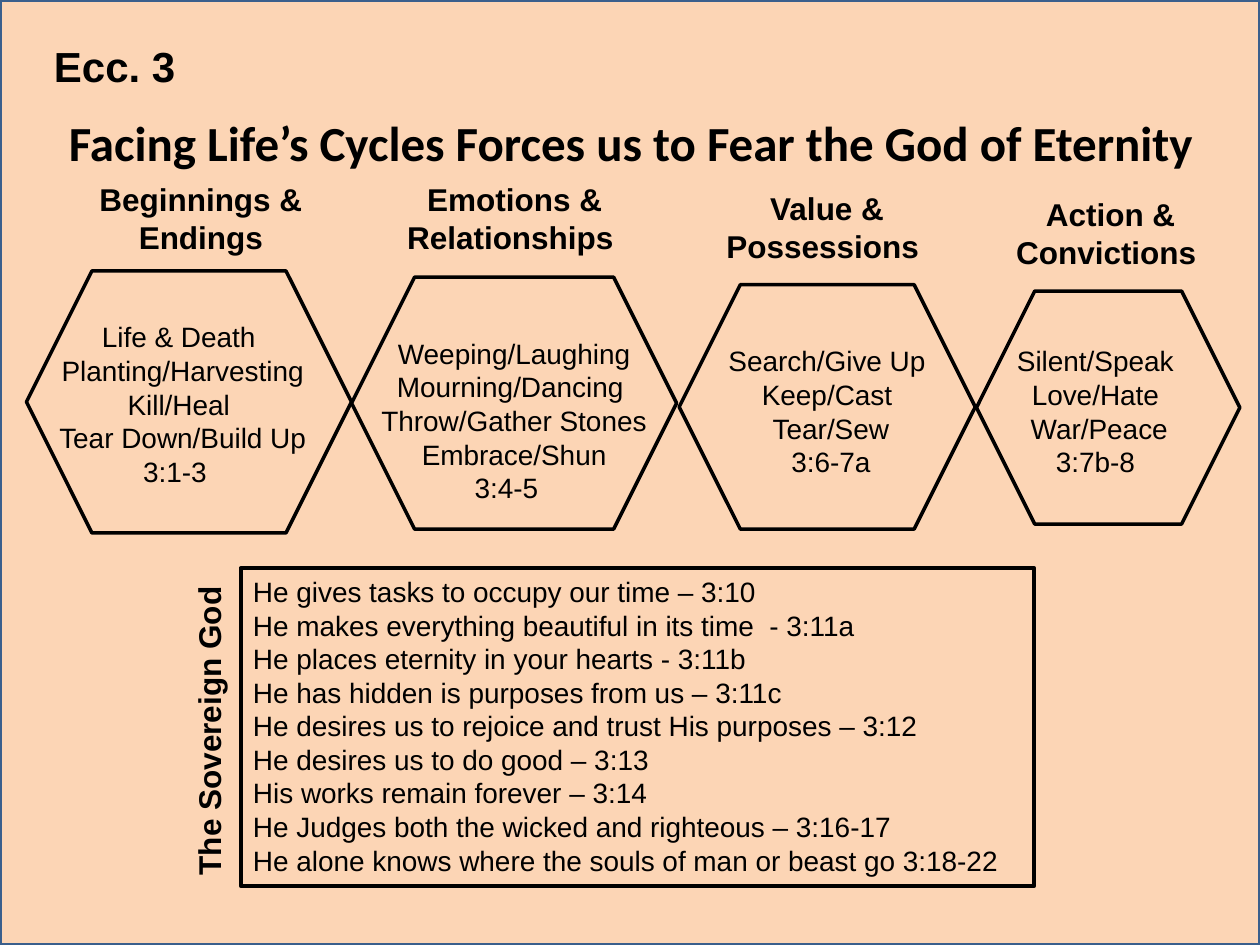
from pptx import Presentation
from pptx import util as u
from pptx.dml.color import RGBColor
from pptx.enum import shapes, text

COLORS = {"ink": "000000", "paper": "FCD5B5", "frame": "3A5F8C"}
LEFT, CENTER = text.PP_ALIGN.LEFT, text.PP_ALIGN.CENTER
BODY = {"name": "Arial", "size": u.Pt(16), "bold": False}
LABEL = {"name": "Arial", "size": u.Pt(18), "bold": True}
CORNER = {"name": "Arial", "size": u.Pt(24), "bold": True}
TITLE = {"name": "Calibri", "size": u.Pt(28), "bold": True}

CYCLES = [
    ("Beginnings & Endings", (0.68, 1.38, 1.83, 0.71), (0.21, 2.15, 2.58, 2.08),
     (0.16, 2.49, 2.58, 1.45),
     ["Life & Death ", "Planting/Harvesting", "Kill/Heal ", "Tear Down/Build Up", "3:1-3  "]),
    ("Emotions & Relationships ", (3.11, 1.38, 1.95, 0.71), (2.79, 2.2, 2.58, 2),
     (2.79, 2.62, 2.58, 1.45),
     ["Weeping/Laughing", "Mourning/Dancing ", "Throw/Gather Stones", "Embrace/Shun", "3:4-5  "]),
    ("Value & Possessions ", (5.65, 1.45, 1.83, 0.71), (5.39, 2.26, 2.35, 1.94),
     (5.68, 2.68, 1.83, 1.18),
     ["Search/Give Up ", "Keep/Cast ", "Tear/Sew", "3:6-7a"]),
    ("Action & Convictions ", (7.9, 1.5, 1.83, 0.71), (7.75, 2.31, 2.09, 1.85),
     (7.81, 2.68, 1.83, 1.18),
     ["Silent/Speak ", "Love/Hate ", "War/Peace", "3:7b-8 "]),
]
SOVEREIGN = [
    "He gives tasks to occupy our time – 3:10",
    "He makes everything beautiful in its time  - 3:11a",
    "He places eternity in your hearts - 3:11b",
    "He has hidden is purposes from us – 3:11c",
    "He desires us to rejoice and trust His purposes – 3:12",
    "He desires us to do good – 3:13",
    "His works remain forever – 3:14",
    "He Judges both the wicked and righteous – 3:16-17",
    "He alone knows where the souls of man or beast go 3:18-22",
]


def rgb(name):
    return RGBColor.from_string(COLORS[name])


class Deck:
    def __init__(self, width, height):
        self.prs = Presentation()
        self.prs.slide_width, self.prs.slide_height = u.Inches(width), u.Inches(height)
        self.s = self.prs.slides.add_slide(self.prs.slide_layouts[5])

    def add_lines(self, sp, lines, style, align, anchor=text.MSO_ANCHOR.TOP):
        tf = sp.text_frame
        tf.word_wrap = True
        tf.vertical_anchor = anchor
        for i, line in enumerate(lines):
            p = tf.add_paragraph() if i else tf.paragraphs[0]
            p.alignment = align
            r = p.add_run()
            r.text = line
            for key, value in style.items():
                setattr(r.font, key, value)
            r.font.color.rgb = rgb("ink")

    def title(self, box, line):
        sp = self.s.shapes.title
        sp.left, sp.top, sp.width, sp.height = map(u.Inches, box)
        self.add_lines(sp, [line], TITLE, CENTER, text.MSO_ANCHOR.MIDDLE)

    def shape(self, kind, box, line="ink", weight=2, fill=None):
        sp = self.s.shapes.add_shape(kind, *map(u.Inches, box))
        sp.shadow.inherit = False
        if fill:
            sp.fill.solid()
            sp.fill.fore_color.rgb = rgb(fill)
        else:
            sp.fill.background()
        sp.line.color.rgb = rgb(line)
        sp.line.width = u.Pt(weight)
        return sp

    def backdrop(self):
        sp = self.shape(shapes.MSO_SHAPE.RECTANGLE, (0, 0, 10, 7.5), "frame", 2, "paper")
        self.s.shapes.title.element.addprevious(sp.element)

    def label(self, box, lines, style, align=LEFT, rotation=0):
        sp = self.s.shapes.add_textbox(*map(u.Inches, box))
        sp.rotation = rotation
        self.add_lines(sp, lines, style, align)


def main():
    deck = Deck(10, 7.5)
    deck.backdrop()
    deck.title((0.42, 0.8, 9.17, 0.65),
               "Facing Life’s Cycles Forces us to Fear the God of Eternity ")
    for heading, heading_box, hexagon_box, body_box, lines in CYCLES:
        deck.shape(shapes.MSO_SHAPE.HEXAGON, hexagon_box)
        deck.label(heading_box, [heading], LABEL, CENTER)
        deck.label(body_box, lines, BODY, CENTER)
    panel = deck.shape(shapes.MSO_SHAPE.RECTANGLE, (1.91, 4.51, 6.3, 2.52), weight=2.25)
    deck.add_lines(panel, SOVEREIGN, BODY, LEFT)
    deck.label((0.35, 5.54, 2.61, 0.4), ["The Sovereign God"], LABEL, rotation=270)
    deck.label((0.33, 0.27, 1.33, 0.5), ["Ecc. 3"], CORNER)
    deck.prs.save("out.pptx")


if __name__ == "__main__":
    main()
